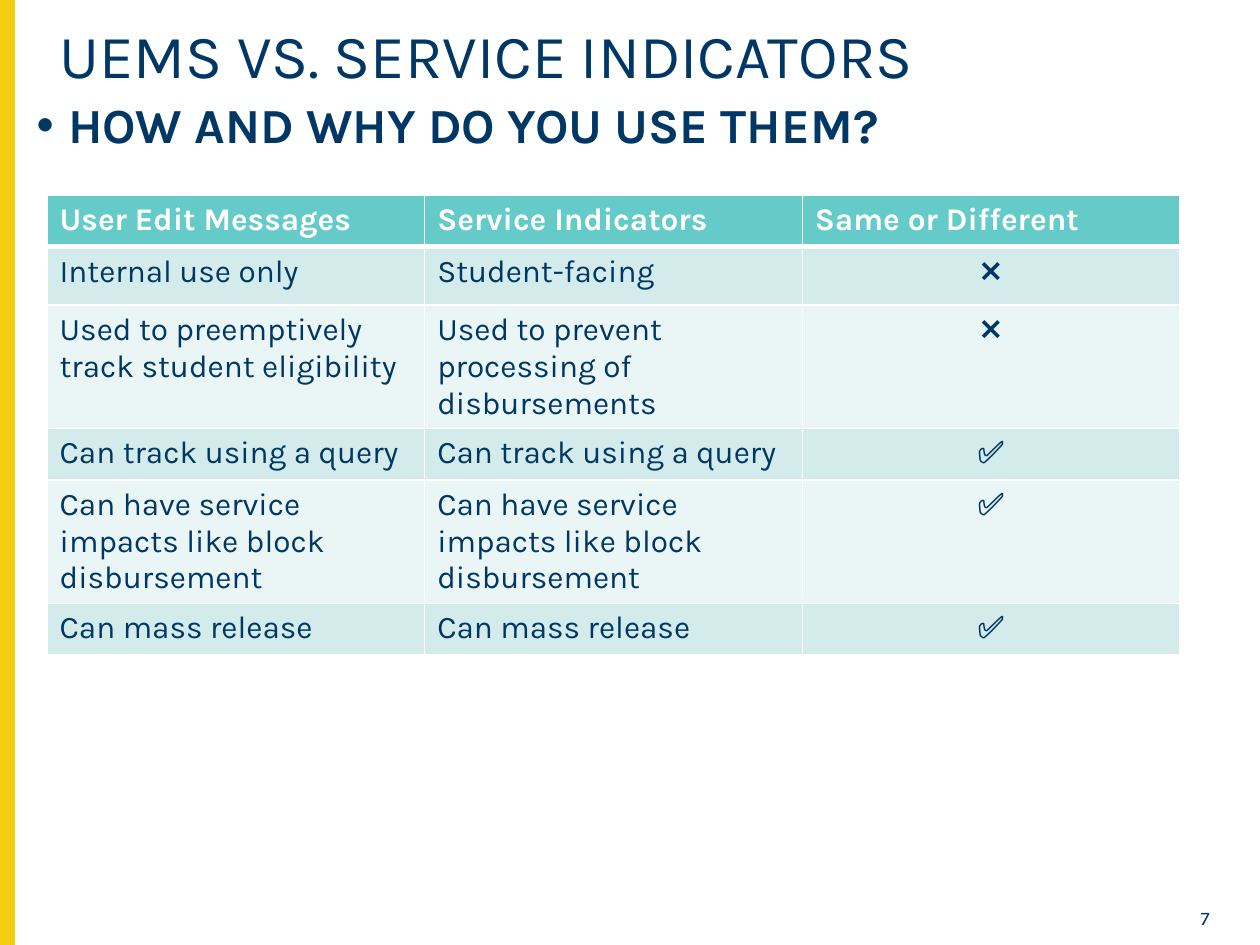
from lxml.etree import SubElement
from pptx import Presentation
from pptx.dml.color import RGBColor
from pptx.enum.shapes import MSO_SHAPE as Shape
from pptx.enum.text import MSO_ANCHOR as Anchor, MSO_AUTO_SIZE as AutoSize, PP_ALIGN as Align
from pptx.oxml.ns import qn
from pptx.util import Pt

TITLE = "UEMS VS. SERVICE INDICATORS"
QUESTION = "HOW AND WHY DO YOU USE THEM?"
PAGE_NUMBER = "7"
HEADER = ("User Edit Messages", "Service Indicators", "Same or Different")
DIFFERENT, SAME = "❌", "✅"
COMPARISONS = [
    ("Internal use only", "Student-facing", DIFFERENT),
    ("Used to preemptively track student eligibility",
     "Used to prevent processing of disbursements", DIFFERENT),
    ("Can track using a query", "Can track using a query", SAME),
    ("Can have service impacts like block disbursement",
     "Can have service impacts like block disbursement", SAME),
    ("Can mass release", "Can mass release", SAME),
]
NAVY, GOLD, WHITE, TEAL = "003764", "F4CE12", "FFFFFF", "65CBC9"
BANDS = ("D3ECEB", "EAF6F5")
ROW_HEIGHTS = (29.2, 33.4, 29.2, 29.2, 29.2, 29.2)
COLUMN_WIDTH = 215.8


def color(value):
    return RGBColor.from_string(value)


def fill(item, value):
    item.fill.solid()
    item.fill.fore_color.rgb = color(value)


def place(box, left, top, width, height):
    bounds = dict(left=left, top=top, width=width, height=height)
    for name, value in bounds.items():
        setattr(box, name, Pt(value))


def write(frame, text, size, ink=NAVY, bold=False, align=Align.LEFT, spacing=1.0):
    para = frame.paragraphs[0]
    layout = dict(alignment=align, line_spacing=spacing, space_before=Pt(0))
    for name, value in layout.items():
        setattr(para, name, value)
    span = para.add_run()
    span.text = text
    for name, value in dict(name="Karla", size=Pt(size), bold=bold).items():
        setattr(span.font, name, value)
    span.font.color.rgb = color(ink)
    return para


def write_box(box, text, size, **style):
    frame = box.text_frame
    settings = dict(word_wrap=True, auto_size=AutoSize.NONE, vertical_anchor=Anchor.TOP,
                    margin_left=Pt(7.2), margin_right=Pt(7.2),
                    margin_top=Pt(3.6), margin_bottom=Pt(3.6))
    for name, value in settings.items():
        setattr(frame, name, value)
    return write(frame, text, size, **style)


def add_bullet(para, indent):
    properties = para._p.get_or_add_pPr()
    properties.set("marL", str(Pt(indent)))
    properties.set("indent", str(-Pt(indent)))
    bullet_color = SubElement(properties, qn("a:buClr"))
    SubElement(bullet_color, qn("a:srgbClr"), val=NAVY)
    SubElement(properties, qn("a:buFont"), typeface="Arial")
    SubElement(properties, qn("a:buChar"), char="•")


def add_borders(cell, bottom):
    properties = cell._tc.get_or_add_tcPr()
    widths = dict(lnL=1, lnR=1, lnT=1, lnB=bottom)
    for position, (side, width) in enumerate(widths.items()):
        line = SubElement(properties, qn(f"a:{side}"), w=str(Pt(width)))
        SubElement(SubElement(line, qn("a:solidFill")), qn("a:srgbClr"), val=WHITE)
        properties.insert(position, line)


def add_comparison_table(page):
    rows = [HEADER] + COMPARISONS
    frame = page.shapes.add_table(len(rows), len(HEADER), Pt(26.9), Pt(111.8),
                                  Pt(COLUMN_WIDTH * len(HEADER)), Pt(sum(ROW_HEIGHTS)))
    table = frame.table
    for column in table.columns:
        column.width = Pt(COLUMN_WIDTH)
    for index, (texts, height) in enumerate(zip(rows, ROW_HEIGHTS)):
        table.rows[index].height = Pt(height)
        is_header = index == 0
        for position, text in enumerate(texts):
            cell = table.cell(index, position)
            fill(cell, TEAL if is_header else BANDS[(index - 1) % 2])
            add_borders(cell, 3 if is_header else 1)
            write(cell.text_frame, text, 18, ink=WHITE if is_header else NAVY,
                  bold=is_header,
                  align=Align.CENTER if text in (SAME, DIFFERENT) else Align.LEFT)


def main():
    deck = Presentation()
    deck.slide_width, deck.slide_height = Pt(720), Pt(540)
    page = deck.slides.add_slide(deck.slide_layouts[1])
    title, body = page.placeholders

    stripe = page.shapes.add_shape(Shape.RECTANGLE, Pt(0), Pt(0), Pt(7.9), Pt(540))
    stripe.shadow.inherit = False
    fill(stripe, GOLD)
    stripe.line.color.rgb = color(GOLD)
    stripe.line.width = Pt(1)

    place(title, 26.6, 10.8, 668.2, 56.9)
    write_box(title, TITLE, 35, spacing=0.9)
    place(body, 13.7, 54, 684.7, 419)
    question = write_box(body, QUESTION, 28, bold=True, spacing=0.9)
    add_bullet(question, 18)

    number = page.shapes.add_textbox(Pt(662.4), Pt(514.1), Pt(36), Pt(15.1))
    write_box(number, PAGE_NUMBER, 11, align=Align.RIGHT)
    add_comparison_table(page)
    deck.save("out.pptx")


if __name__ == "__main__":
    main()
